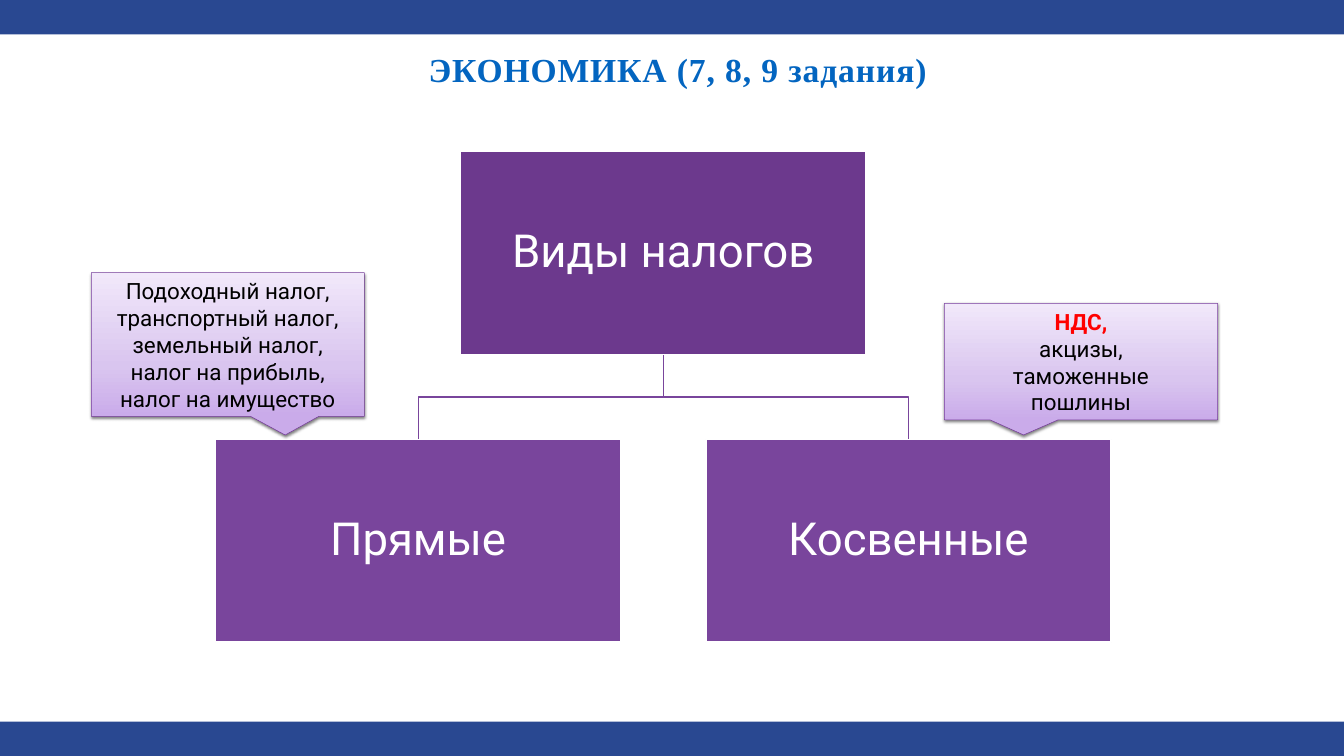
from copy import deepcopy
from dataclasses import dataclass

from lxml import etree
from pptx import Presentation
from pptx import util as u
from pptx.dml import color
from pptx.enum import shapes, text
from pptx.oxml import ns


@dataclass(frozen=True)
class Theme:
    """Colours, fonts and type sizes of the slide."""
    bar: str = "294891"
    head: str = "0365C0"
    edge: str = "F4F5FA"
    root: str = "6C398D"
    leaf: str = "79459C"
    rim: str = "753B9A"
    paper: str = "FFFFFF"
    ink: str = "000000"
    alert: str = "FF0000"
    fade: tuple = ((0, "CAABEA"), (0.35, "D9C5EF"), (1, "F1E8FA"))
    sans: str = "Roboto"
    serif: str = "Times New Roman"
    big: int = 65
    title: int = 48
    small: int = 32


def rgb(code):
    """Turn a hex code into a colour."""
    return color.RGBColor.from_string(code)


def node(tag, body="", **attrs):
    """Make a drawing element with the given inner markup."""
    pairs = "".join(f' {k}="{v}"' for k, v in attrs.items())
    return etree.fromstring(
        f'<a:{tag} xmlns:a="{ns.nsuri("a")}"{pairs}>{body}</a:{tag}>')


def shade(tint, blur, dist, angle, alpha):
    """Make an outer shadow from points, degrees and percent."""
    fill = f'<a:srgbClr val="{tint}"><a:alpha val="{alpha * 1000}"/></a:srgbClr>'
    return node("outerShdw", fill, blurRad=u.Pt(blur), dist=u.Pt(dist),
                dir=angle * 60000, algn="ctr", rotWithShape=0)


class Deck:
    """Draw on one slide, with lengths in percent of its size."""

    def __init__(self, theme, wide, high):
        """Open a slide of the given inches."""
        self.theme = theme
        self.show = Presentation()
        self.show.slide_width, self.show.slide_height = u.Inches(wide), u.Inches(high)
        self.page = self.show.slides.add_slide(self.show.slide_layouts[5])

    def place(self, *shares):
        """Turn x, y pairs of shares into lengths."""
        sizes = self.show.slide_width, self.show.slide_height
        return [int(sizes[i % 2] * v / 100) for i, v in enumerate(shares)]

    def label(self, shape, lines, inset, pitch=1, anchor=text.MSO_ANCHOR.MIDDLE, **base):
        """Fill a shape with centred lines of text and format."""
        frame = shape.text_frame
        pad = u.Inches(inset)
        form = dict(word_wrap=True, vertical_anchor=anchor, margin_left=pad,
                    margin_right=pad, margin_top=pad, margin_bottom=pad)
        for name, value in form.items():
            setattr(frame, name, value)
        for i, (words, extra) in enumerate(lines):
            para = frame.add_paragraph() if i else frame.paragraphs[0]
            para.alignment, para.line_spacing = text.PP_ALIGN.CENTER, pitch
            run = para.add_run()
            run.text = words
            style = {**base, **extra}
            run.font.color.rgb = rgb(style.pop("tint"))
            for name, value in style.items():
                setattr(run.font, name, value)

    def title(self, area, words):
        """Set the title with its outline and glow."""
        t = self.theme
        shape = self.page.shapes.title
        for name, value in zip(("left", "top", "width", "height"), self.place(*area)):
            setattr(shape, name, value)
        self.label(shape, [(words, {})], 0.03, anchor=text.MSO_ANCHOR.TOP, tint=t.head,
                   name=t.serif, size=u.Pt(t.title), bold=True)
        props = shape.text_frame.paragraphs[0].runs[0].font._element
        props.set("spc", "130")
        fill = f'<a:solidFill><a:srgbClr val="{t.edge}"/></a:solidFill>'
        props.insert(0, node("ln", fill, w=u.Pt(0.9)))
        glow = node("effectLst")
        glow.append(shade(t.head, 4, 2, 45, 40))
        props.find(ns.qn("a:solidFill")).addnext(glow)

    def shape(self, kind, area, fill=None, line=None, weight=2):
        """Add a preset shape without a shadow."""
        item = self.page.shapes.add_shape(kind, *self.place(*area))
        if fill:
            item.fill.solid()
            item.fill.fore_color.rgb = rgb(fill)
        if line:
            item.line.color.rgb, item.line.width = rgb(line), u.Pt(weight)
        else:
            item.line.fill.background()
        item.shadow.inherit = False
        return item

    def bar(self, top, high):
        """Add a band across the slide."""
        self.shape(shapes.MSO_SHAPE.RECTANGLE, (0, top, 100, high), self.theme.bar)

    def box(self, area, words, fill):
        """Add a labelled box of the tree."""
        t = self.theme
        item = self.shape(shapes.MSO_SHAPE.RECTANGLE, area, fill, t.paper)
        self.label(item, [(words, {})], 0.05, 0.9, tint=t.paper, name=t.sans,
                   size=u.Pt(t.big))

    def elbow(self, x, y, tox, toy):
        """Join two points through a level halfway down."""
        mid = (y + toy) / 2
        start, *rest = [self.place(*p) for p in ((x, y), (x, mid), (tox, mid), (tox, toy))]
        line = self.page.shapes.build_freeform(*start)
        line.add_line_segments(rest, close=False)
        item = line.convert_to_shape()
        item.fill.background()
        item.line.color.rgb, item.line.width = rgb(self.theme.leaf), u.Pt(2)
        item.shadow.inherit = False

    def note(self, area, lines, tip):
        """Add a shaded callout whose tip points to one side."""
        t = self.theme
        item = self.shape(shapes.MSO_SHAPE.RECTANGULAR_CALLOUT, area, None, t.rim, 0.75)
        item.adjustments[0], item.adjustments[1] = tip, 0.63
        item.fill.gradient()
        item.fill.gradient_angle = 90
        props = item._element.spPr
        stops = props.find(".//" + ns.qn("a:gsLst"))
        stops.append(deepcopy(stops[0]))
        for stop, (spot, tint) in zip(item.fill.gradient_stops, t.fade):
            stop.position, stop.color.rgb = spot, rgb(tint)
        props.find(ns.qn("a:effectLst")).append(shade(t.ink, 4, 2, 90, 50))
        self.label(item, lines, 0.08, tint=t.ink, name=t.sans, size=u.Pt(t.small))


def main():
    """Build the slide on kinds of taxes."""
    t = Theme()
    deck = Deck(t, 26.67, 15)
    wide, high, mid, step = 30.15, 26.8, 49.36, 18.24
    top, low = 20.07, 58.13
    band = 4.55
    for y in (0, 100 - band):
        deck.bar(y, band)
    deck.title((30.67, 6.33, 39.56, 5.67), "ЭКОНОМИКА (7, 8, 9 задания)")
    leaves = [(mid - step, "Прямые"), (mid + step, "Косвенные")]
    for x, _ in leaves:
        deck.elbow(mid, top + high, x, low)
    for x, y, words, fill in [(mid, top, "Виды налогов", t.root)] + [
            (x, low, words, t.leaf) for x, words in leaves]:
        deck.box((x - wide / 2, y, wide, high), words, fill)
    direct = ("Подоходный налог,", "транспортный налог,", "земельный налог,",
              "налог на прибыль,", "налог на имущество")
    other = ("акцизы,", "таможенные", "пошлины")
    deck.note((6.79, 36.07, 20.32, 19), [(w, {}) for w in direct], 0.21)
    deck.note((70.27, 40.13, 20.32, 15.4),
              [("НДС,", dict(tint=t.alert, bold=True))] + [(w, {}) for w in other], -0.21)
    deck.show.save("out.pptx")


if __name__ == "__main__":
    main()
